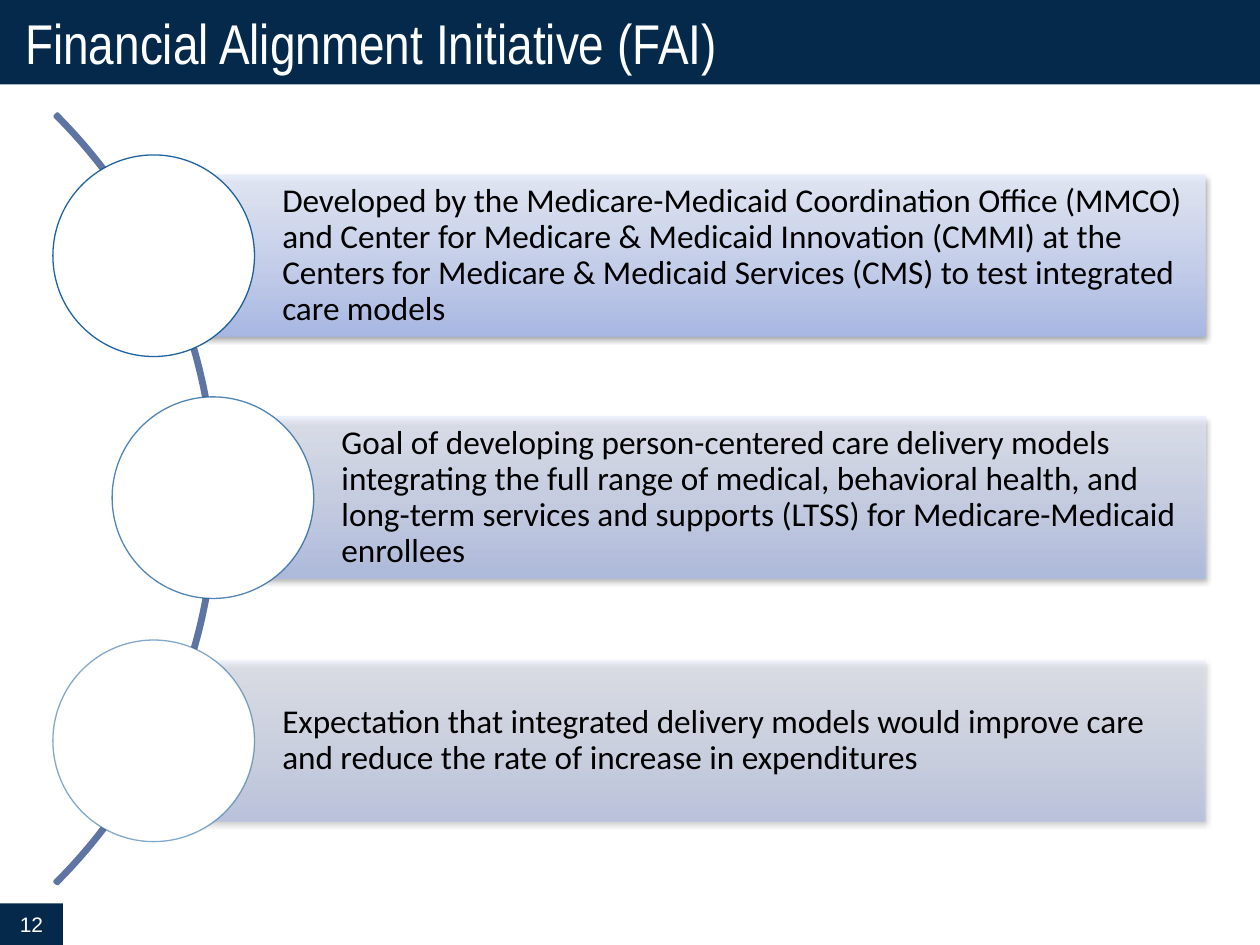
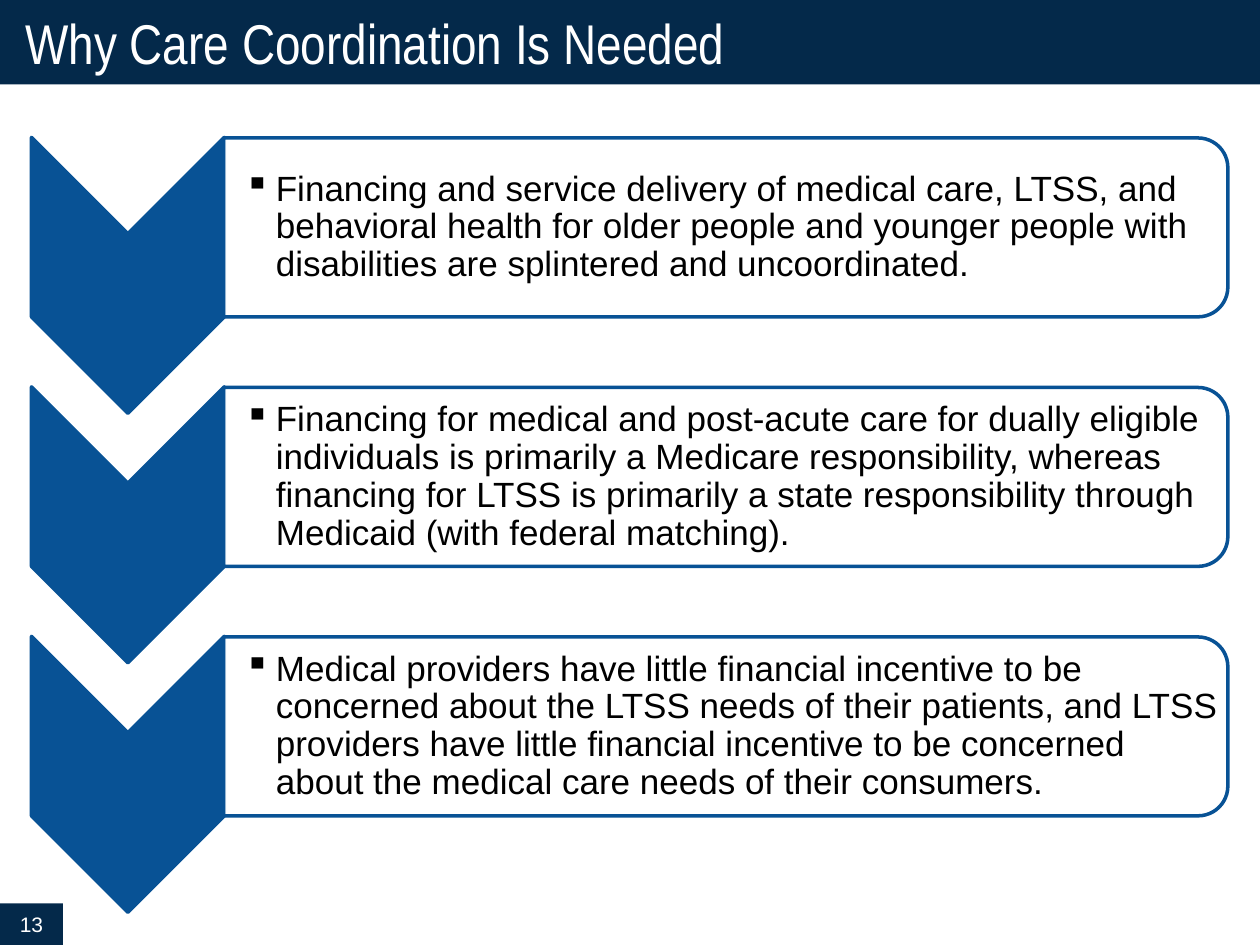
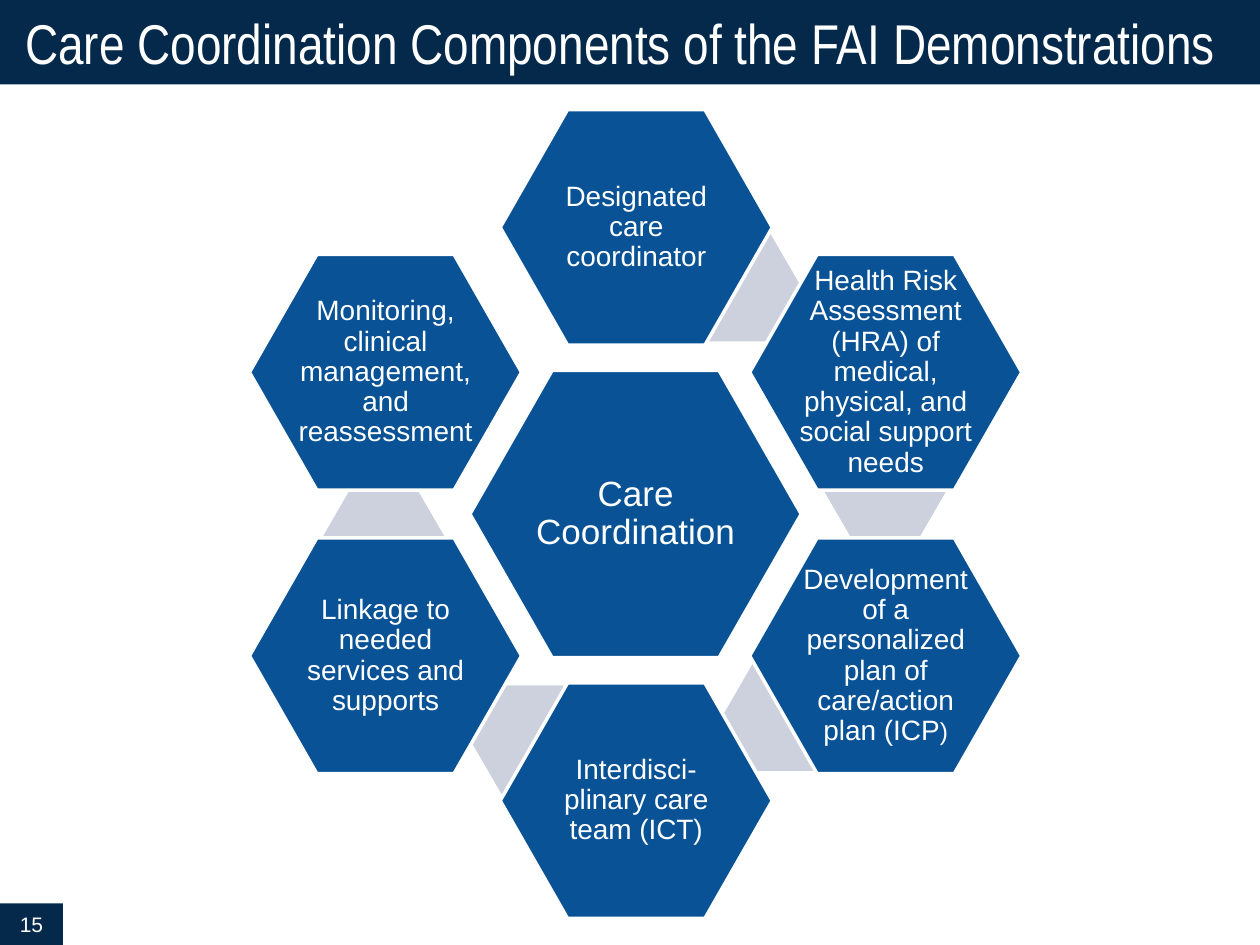
from lxml import etree
from pptx import Presentation
from pptx.dml.color import RGBColor
from pptx.enum.shapes import MSO_SHAPE
from pptx.enum.text import MSO_ANCHOR, MSO_AUTO_SIZE, PP_ALIGN
from pptx.oxml.ns import qn
from pptx.util import Pt

PX = 9144  # EMU in one px, at 100 px to the inch
RECTANGLE, OVAL = MSO_SHAPE.RECTANGLE, MSO_SHAPE.OVAL
ARC, CHEVRON = MSO_SHAPE.BLOCK_ARC, MSO_SHAPE.CHEVRON
HEXAGON, ROUND_TOP = MSO_SHAPE.HEXAGON, MSO_SHAPE.ROUND_2_SAME_RECTANGLE
MIDDLE, NO_FIT = MSO_ANCHOR.MIDDLE, MSO_AUTO_SIZE.NONE
LEFT, CENTER = PP_ALIGN.LEFT, PP_ALIGN.CENTER

COLORS = {
    "navy": "04294A", "blue": "085295", "arc": "5E75A4", "link": "CCD1DD",
    "white": "FFFFFF", "black": "000000",
    "bar_low": "A7B8E9", "bar_mid": "C2CDEE", "bar_high": "E7ECF9",
}


def rgb(name):
    return RGBColor.from_string(COLORS[name])


def add_xml(parent, tag, **attributes):
    child = etree.SubElement(parent, qn(tag))
    for key, value in attributes.items():
        child.set(key, str(value))
    return child


def add_color(parent, name, alpha):
    color = add_xml(parent, "a:srgbClr", val=COLORS[name])
    add_xml(color, "a:alpha", val=alpha * 1000)


def set_alpha(paint, alpha):
    """Make a solid fill or a line see-through; alpha is a percentage."""
    if alpha < 100:
        add_xml(next(paint.iter(qn("a:srgbClr"))), "a:alpha", val=alpha * 1000)


class Pages:
    """Holds the deck's style and the current slide."""

    def __init__(self):
        self.deck = Presentation()
        self.deck.slide_width, self.deck.slide_height = 1000 * PX, 750 * PX
        self.slide = None

    def place(self, item, at):
        item.left, item.top, item.width, item.height = (n * PX for n in at)

    def fill_text(self, item, text, size, color="black", font="Arial", align=LEFT,
                  insets=(10, 5, 10, 5), spacing=None):
        frame = item.text_frame
        frame.text = text
        frame.word_wrap, frame.auto_size = True, NO_FIT
        frame.vertical_anchor = MIDDLE
        (frame.margin_left, frame.margin_top,
         frame.margin_right, frame.margin_bottom) = (n * PX for n in insets)
        para = frame.paragraphs[0]
        para.alignment, para.line_spacing = align, spacing
        self.style(para.runs[0], size, color, font)
        return para

    def style(self, span, size, color, font="Arial"):
        span.font.size, span.font.name = Pt(size), font
        span.font.color.rgb = rgb(color)

    def page(self, title, number):
        self.slide = self.deck.slides.add_slide(self.deck.slide_layouts[5])
        band = self.slide.shapes.title
        self.place(band, (0, 0, 1000, 67))
        band.fill.solid()
        band.fill.fore_color.rgb = rgb("navy")
        self.fill_text(band, title, 32, "white", "Arial Narrow",
                       insets=(20, 10, 20, 10))
        tab = self.shape(RECTANGLE, (0, 717, 50, 33), "navy")
        self.fill_text(tab, str(number), 12, "white", align=CENTER)

    def shape(self, preset, at, fill=None, line=None, weight=2, rotation=0,
              adjustments=(), fill_alpha=100, line_alpha=100):
        shape = self.slide.shapes.add_shape(preset, *(n * PX for n in at))
        shape.shadow.inherit = False
        shape.rotation = rotation
        for index, value in enumerate(adjustments):
            shape.adjustments[index] = value
        properties = shape._element.spPr
        if fill:
            shape.fill.solid()
            shape.fill.fore_color.rgb = rgb(fill)
            set_alpha(properties.find(qn("a:solidFill")), fill_alpha)
        else:
            shape.fill.background()
        if line:
            shape.line.color.rgb = rgb(line)
            shape.line.width = Pt(weight)
            set_alpha(properties.find(qn("a:ln")), line_alpha)
        else:
            shape.line.fill.background()
        return shape

    def gradient_bar(self, at, alpha):
        bar = self.shape(RECTANGLE, at)
        bar.fill.gradient()
        bar.fill.gradient_angle = 90
        properties = bar._element.spPr
        stops = properties.find(qn("a:gradFill")).find(qn("a:gsLst"))
        for stop in list(stops):
            stops.remove(stop)
        for position, name in ((0, "bar_low"), (35, "bar_mid"), (100, "bar_high")):
            add_color(add_xml(stops, "a:gs", pos=position * 1000), name, alpha)
        shadow = add_xml(properties.find(qn("a:effectLst")), "a:outerShdw",
                         blurRad=Pt(3.1), dist=Pt(1.6), dir=90 * 60000,
                         rotWithShape=0)
        add_color(shadow, "black", 38)

    def text(self, at, text, size, **style):
        box = self.slide.shapes.add_textbox(*(n * PX for n in at))
        return self.fill_text(box, text, size, spacing=0.9, **style)

    def bullet(self, at, text, size):
        para = self.text(at, text, size, insets=(16, 1, 1, 1))
        para.level = 1
        properties = para._p.get_or_add_pPr()
        properties.set("marL", str(25 * PX))
        properties.set("indent", str(-25 * PX))
        add_xml(properties, "a:buChar", char="▪")

    def hexagon(self, at, text, size, inset):
        left, top, width, height = at
        self.shape(HEXAGON, at, "blue", "white", adjustments=(0.286,))
        side, rise = width // 6, height // 6
        area = (left + side, top + rise, width - 2 * side, height - 2 * rise)
        return self.text(area, text, size, color="white", align=CENTER,
                         insets=(inset,) * 4)


def build_initiative(pages):
    pages.page("Financial Alignment Initiative (FAI)", 12)
    pages.shape(ARC, (-692, -36, 864, 864), line="arc",
                adjustments=(189, 27, 0.003))
    # Left edge of the bar, opacity, text
    points = [
        (122, 90, "Developed by the Medicare-Medicaid Coordination Office (MMCO) "
         "and Center for Medicare & Medicaid Innovation (CMMI) at the Centers for "
         "Medicare & Medicaid Services (CMS) to test integrated care models"),
        (169, 70, "Goal of developing person-centered care delivery models "
         "integrating the full range of medical, behavioral health, and long-term "
         "services and supports (LTSS) for Medicare-Medicaid enrollees"),
        (122, 50, "Expectation that integrated delivery models would improve care "
         "and reduce the rate of increase in expenditures"),
    ]
    right_edge = 957
    for row, (left, alpha, text) in enumerate(points):
        top = 139 + round(row * 192.5)
        bar = (left, top, right_edge - left, 128)
        pages.gradient_bar(bar, alpha)
        pages.text(bar, text, 19, font="Calibri", insets=(102, 5, 5, 5))
        pages.shape(OVAL, (left - 80, top - 16, 160, 160), "white", "blue",
                    weight=0.75, line_alpha=alpha)


def build_reasons(pages):
    pages.page("Why Care Coordination Is Needed", 13)
    reasons = [
        "Financing and service delivery of medical care, LTSS, and behavioral "
        "health for older people and younger people with disabilities are "
        "splintered and uncoordinated.",
        "Financing for medical and post-acute care for dually eligible individuals "
        "is primarily a Medicare responsibility, whereas financing for LTSS is "
        "primarily a state responsibility through Medicaid (with federal matching).",
        "Medical providers have little financial incentive to be concerned about "
        "the LTSS needs of their patients, and LTSS providers have little financial "
        "incentive to be concerned about the medical care needs of their consumers.",
    ]
    for row, reason in enumerate(reasons):
        drop = row * 198
        pages.shape(CHEVRON, (-8, 142 + drop, 219, 153), "blue", "blue", rotation=90)
        pages.shape(ROUND_TOP, (505, -218 + drop, 142, 797), "white", "blue",
                    rotation=90, fill_alpha=90)
        pages.bullet((178, 116 + drop, 790, 129), reason, 20)


def build_components(pages):
    pages.page("Care Coordination Components of the FAI Demonstrations", 15)
    pages.hexagon((373, 294, 263, 228), "Care Coordination", 20, inset=3)
    # Corner of the hexagon, text, corner of the link drawn after it
    left, middle, right = 198, 397, 595
    components = [
        (middle, 87, "Designated care coordinator", (537, 185)),
        (right, 202, "Health Risk Assessment (HRA) of medical, physical, and social "
         "support needs", (653, 345)),
        (right, 427, "Development of a personalized plan of care/action plan (ICP",
         (573, 526)),
        (middle, 542, "Interdisci-plinary care team (ICT)", (373, 544)),
        (left, 427, "Linkage to needed services and supports", (255, 385)),
        (left, 202, "Monitoring, clinical management, and reassessment", None),
    ]
    for x, y, text, link in components:
        if link:
            pages.shape(HEXAGON, (*link, 99, 86), "link", adjustments=(0.289,))
        para = pages.hexagon((x, y, 216, 187), text, 16, inset=2)
        if text.endswith("(ICP"):
            span = para.add_run()
            span.text = ")"
            pages.style(span, 14, "white")


def main():
    pages = Pages()
    build_initiative(pages)
    build_reasons(pages)
    build_components(pages)
    pages.deck.save("out.pptx")


if __name__ == "__main__":
    main()
